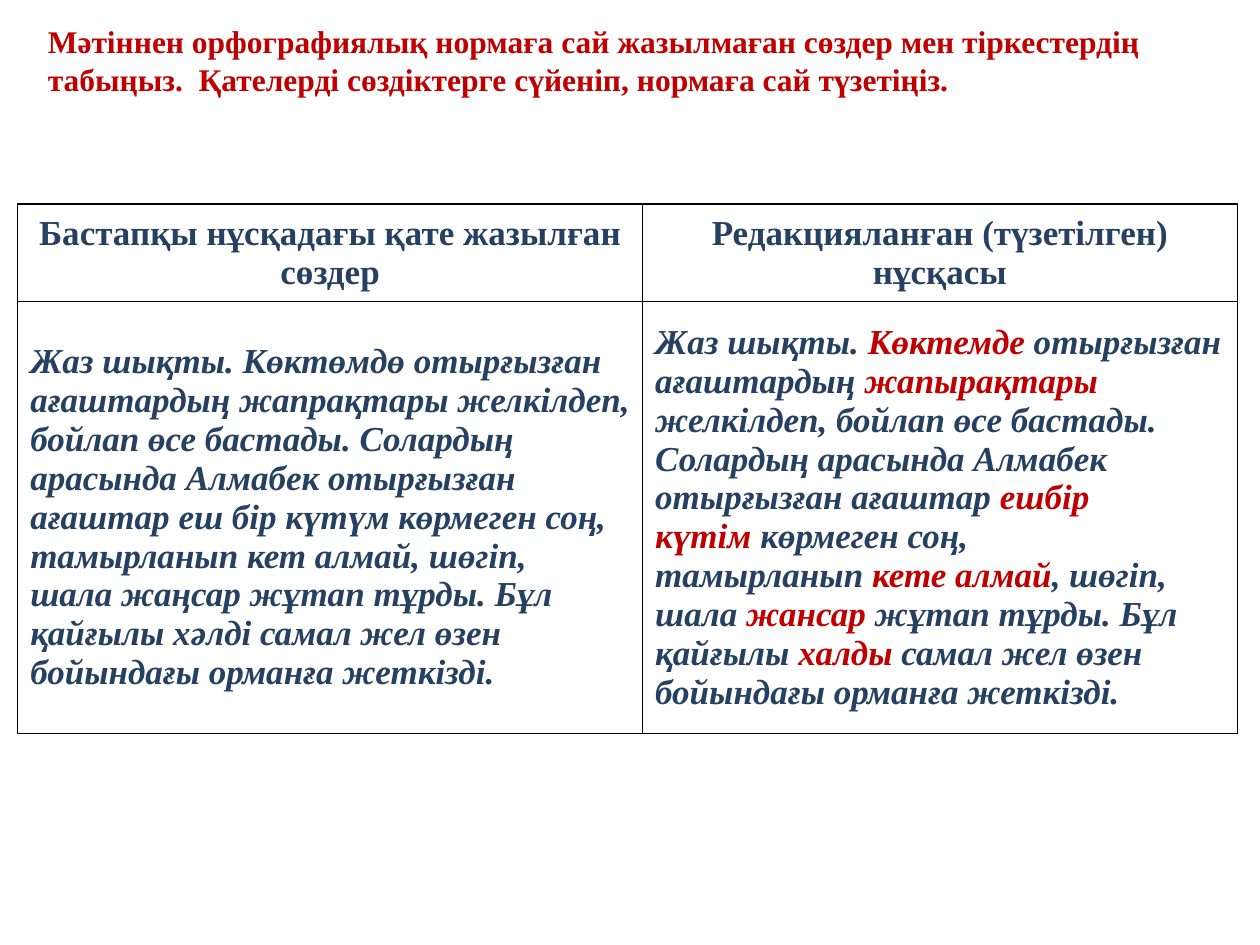
"""Build a spelling exercise slide with a table of wrong and corrected text."""
from lxml import etree
from pptx import Presentation
from pptx.dml.color import RGBColor
from pptx.enum.text import MSO_ANCHOR, MSO_AUTO_SIZE, PP_ALIGN
from pptx.oxml import parse_xml
from pptx.util import Inches, Pt

TOP, MIDDLE = MSO_ANCHOR.TOP, MSO_ANCHOR.MIDDLE
LEFT, CENTER = PP_ALIGN.LEFT, PP_ALIGN.CENTER
NO_FIT = MSO_AUTO_SIZE.NONE
FONT, NAVY, RED, BLACK = "Times New Roman", "254061", "C00000", "000000"
NS = "http://schemas.openxmlformats.org/drawingml/2006/main"
TIE, NO_BREAK_SPACE = "~", chr(160)
W, H = Inches(10), Inches(7.5)
COLS = (0.496, 0.472)
ROWS = (0.103, 0.457)
TITLE = ("Мәтіннен орфографиялық нормаға сай жазылмаған сөздер мен тіркестердің табыңыз.  "
         "Қателерді сөздіктерге сүйеніп, нормаға сай түзетіңіз.")
HEADERS = ("Бастапқы нұсқадағы қате жазылған сөздер", "Редакцияланған (түзетілген) нұсқасы")
WRONG = (
    "Жаз шықты.~Көктөмдө~отырғызған ағаштардың~жапрақтары~желкілдеп, "
    "бойлап өсе бастады. Солардың арасында Алмабек отырғызған ағаштар~еш бір күтүм~көрмеген соң, "
    "тамырланып~кет~алмай, шөгіп, шала~жаңсар~жұтап тұрды. Бұл қайғылы~хәлді~самал жел өзен "
    "бойындағы орманға жеткізді.",
)
CORRECTED = (
    "Жаз шықты.~", "Көктемде~", "отырғызған ағаштардың~", "жапырақтары ",
    "желкілдеп, бойлап өсе бастады. Солардың арасында Алмабек отырғызған ағаштар~",
    "ешбір күтім~", "көрмеген соң, тамырланып~", "кете~алмай", ", шөгіп, шала~", "жансар~",
    "жұтап тұрды. Бұл қайғылы~", "халды~", "самал жел өзен бойындағы орманға жеткізді.",
)


def rgb(color):
    return RGBColor.from_string(color)


def write(p, parts, size, colors, align, italic=False):
    p.alignment = align
    p.font.name, p.font.size = FONT, Pt(size)
    p.font.bold, p.font.italic = True, italic
    for i, part in enumerate(parts):
        r = p.add_run()
        r.text = part.replace(TIE, NO_BREAK_SPACE)
        r.font.color.rgb = rgb(colors[i % len(colors)])


prs = Presentation()
prs.slide_width, prs.slide_height = W, H
s = prs.slides.add_slide(prs.slide_layouts[5])

title = s.shapes.title
title.left, title.top = int(W * 0.028), int(H * 0.017)
title.width, title.height = int(W * 0.941), int(H * 0.095)
tf = title.text_frame
tf.word_wrap, tf.auto_size, tf.vertical_anchor = True, NO_FIT, TOP
write(tf.paragraphs[0], [TITLE], 18, [RED], LEFT)

table = s.shapes.add_table(2, 2, int(W * 0.014), int(H * 0.216),
                           int(W * sum(COLS)), int(H * sum(ROWS))).table
table.first_row = table.horz_banding = False
for column, share in zip(table.columns, COLS):
    column.width = int(W * share)
for row, share in zip(table.rows, ROWS):
    row.height = int(H * share)

grid = [[[text] for text in HEADERS], [WRONG, CORRECTED]]
for y, texts in enumerate(grid):
    for x, parts in enumerate(texts):
        cell = table.cell(y, x)
        cell.vertical_anchor = MIDDLE
        write(cell.text_frame.paragraphs[0], parts, 20, [NAVY, RED],
              LEFT if y else CENTER, italic=y > 0)
        tcPr = cell._tc.get_or_add_tcPr()
        for side in ("lnL", "lnR", "lnT", "lnB"):
            line = parse_xml(f'<a:{side} xmlns:a="{NS}" w="{Pt(1)}"><a:solidFill/></a:{side}>')
            etree.SubElement(line[0], f"{{{NS}}}srgbClr", val=BLACK)
            tcPr.append(line)
        cell.fill.background()

prs.save("out.pptx")
